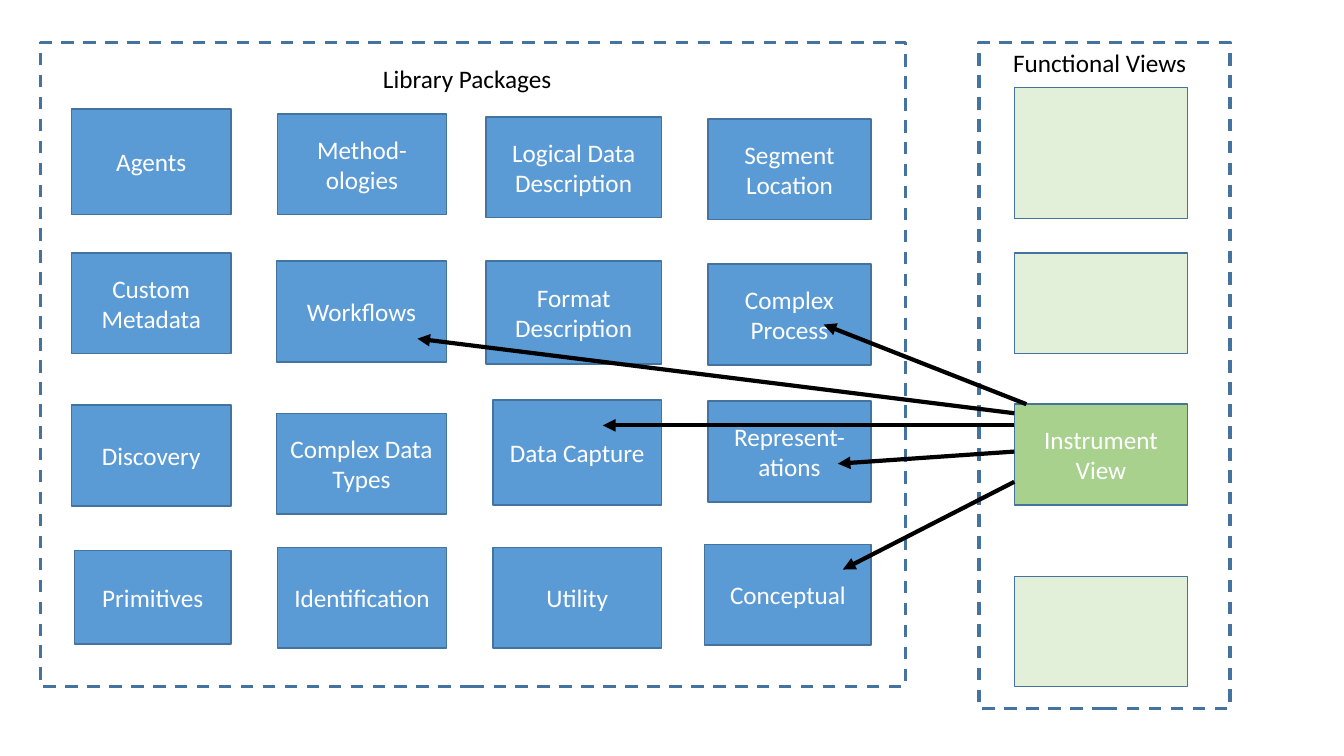
from lxml import etree
from pptx import Presentation
from pptx.dml.color import RGBColor
from pptx.enum.dml import MSO_LINE
from pptx.enum.shapes import MSO_CONNECTOR, MSO_SHAPE
from pptx.enum.text import MSO_ANCHOR, PP_ALIGN
from pptx.oxml.ns import qn
from pptx.util import Inches, Pt

RECT, LINE = MSO_SHAPE.RECTANGLE, MSO_CONNECTOR.STRAIGHT
CENTER, MIDDLE, DASH = PP_ALIGN.CENTER, MSO_ANCHOR.MIDDLE, MSO_LINE.DASH
FONT, SIZE = "Calibri", 18
BLUE, EDGE, PALE, GREEN = "5B9BD5", "43739E", "E2F0D9", "A9D18E"
WHITE, BLACK = "FFFFFF", "000000"

# Each column: its right edge, then boxes as (label, left, top, height)
PACKAGES = [
    (2.29, [("Agents", 0.71, 1.08, 1.05),
            ("Custom Metadata", 0.71, 2.51, 1),
            ("Discovery", 0.71, 4.02, 1),
            ("Primitives", 0.74, 5.46, 0.93)]),
    (4.43, [("Method-ologies", 2.75, 1.13, 1),
            ("Workflows", 2.74, 2.59, 1),
            ("Complex Data Types", 2.74, 4.1, 1),
            ("Identification", 2.75, 5.43, 1)]),
    (6.56, [("Logical Data Description", 4.82, 1.16, 1),
            ("Format Description", 4.82, 2.59, 1.02),
            ("Data Capture", 4.89, 3.97, 1.04),
            ("Utility", 4.89, 5.43, 1)]),
    (8.64, [("Segment Location", 7.02, 1.18, 1),
            ("Complex Process", 7.02, 2.62, 1),
            ("Represent-ations", 7.02, 3.98, 1),
            ("Conceptual", 6.99, 5.4, 1)]),
]
VIEW_X, VIEW_W = 10.06, 1.72
VIEWS = [  # label, top, height, fill
    ("", 0.87, 1.3, PALE),
    ("", 2.51, 1, PALE),
    ("Instrument View", 4.01, 1, GREEN),
    ("", 5.72, 1.09, PALE),
]
TITLES = [("Library Packages", 3.7, 0.58, 1.89),
          ("Functional Views", 9.95, 0.42, 1.94)]
FRAMES = [(0.4, 0.42, 8.58, 6.39), (9.71, 0.42, 2.49, 6.61)]
ARROWS = [  # start, end
    ((10.18, 4.01), (8.17, 3.22)),
    ((VIEW_X, 4.22), (5.98, 4.22)),
    ((VIEW_X, 4.48), (8.31, 4.6)),
    ((VIEW_X, 4.78), (8.36, 5.65)),
    ((VIEW_X, 4.1), (4.14, 3.36)),
]


def color(code):
    return RGBColor.from_string(code)


def write(shape, text, ink):
    para = shape.text_frame.paragraphs[0]
    para.text = text
    font = para.runs[0].font
    font.name, font.size = FONT, Pt(SIZE)
    font.color.rgb = color(ink)
    return para


def outline(left, top, width, height, weight):
    shape = slide.shapes.add_shape(
        RECT, *map(Inches, (left, top, width, height)))
    shape.shadow.inherit = False
    shape.line.color.rgb = color(EDGE)
    shape.line.width = Pt(weight)
    return shape


def add_box(text, left, top, width, height, fill):
    box = outline(left, top, width, height, 1)
    box.fill.solid()
    box.fill.fore_color.rgb = color(fill)
    if text:
        box.text_frame.word_wrap = True
        box.text_frame.vertical_anchor = MIDDLE
        write(box, text, WHITE).alignment = CENTER


def add_frame(*place):
    frame = outline(*place, 2.25)
    frame.fill.background()
    frame.line.dash_style = DASH


def add_title(text, left, top, width):
    title = slide.shapes.add_textbox(*map(Inches, (left, top, width, 0.4)))
    title.text_frame.word_wrap = False
    write(title, text, BLACK)


def add_arrow(start, end):
    arrow = slide.shapes.add_connector(LINE, *map(Inches, start + end))
    arrow.line.color.rgb = color(BLACK)
    arrow.line.width = Pt(3)
    etree.SubElement(arrow.line._get_or_add_ln(), qn("a:tailEnd"),
                     type="triangle")
    etree.SubElement(arrow._element.spPr, qn("a:effectLst"))


deck = Presentation()
deck.slide_width, deck.slide_height = Inches(13.33), Inches(7.5)
slide = deck.slides.add_slide(deck.slide_layouts[6])

for right, boxes in PACKAGES:
    for label, left, top, height in boxes:
        add_box(label, left, top, right - left, height, BLUE)
for label, top, height, fill in VIEWS:
    add_box(label, VIEW_X, top, VIEW_W, height, fill)
for title in TITLES:
    add_title(*title)
for frame in FRAMES:
    add_frame(*frame)
for start, end in ARROWS:
    add_arrow(start, end)

deck.save("out.pptx")
